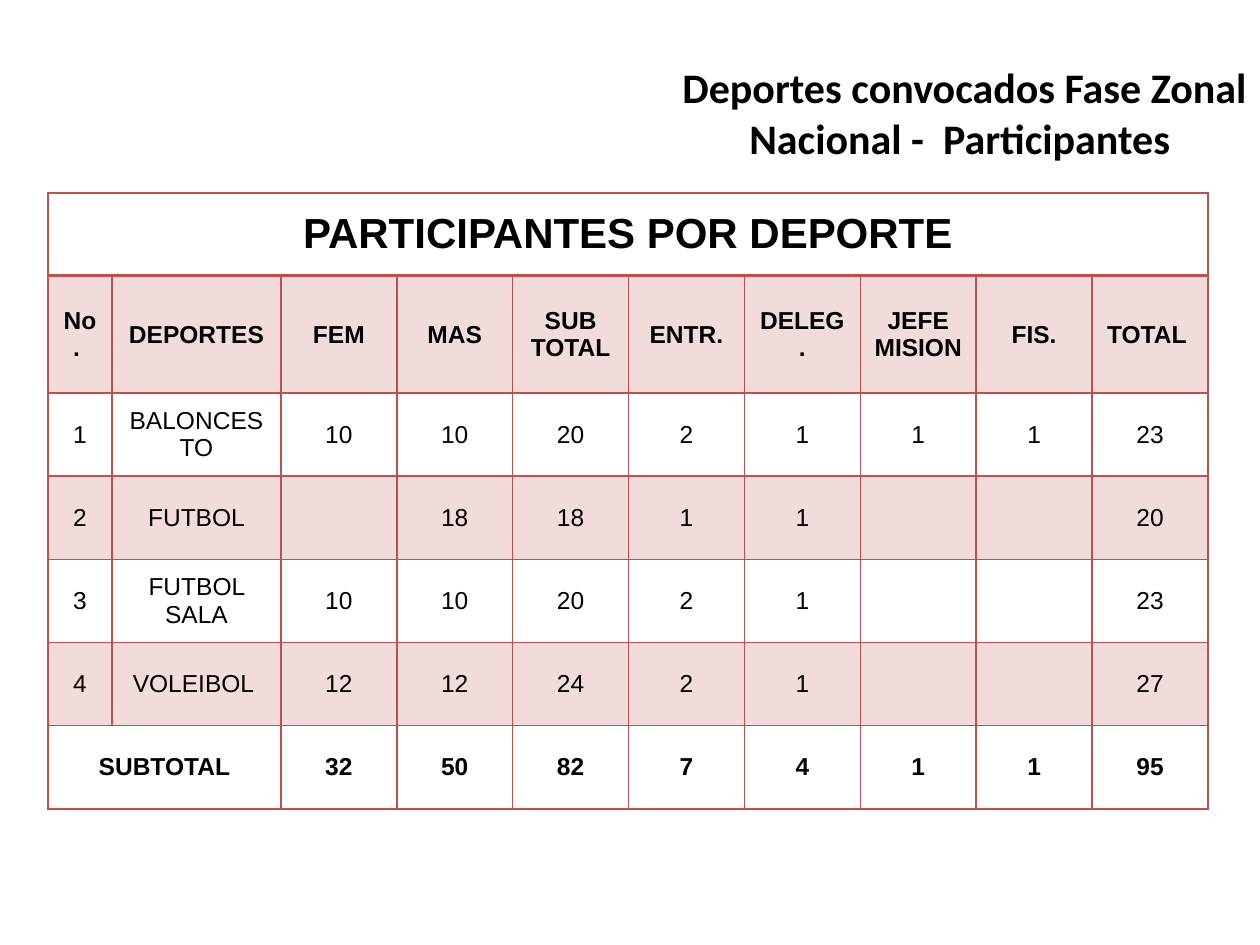
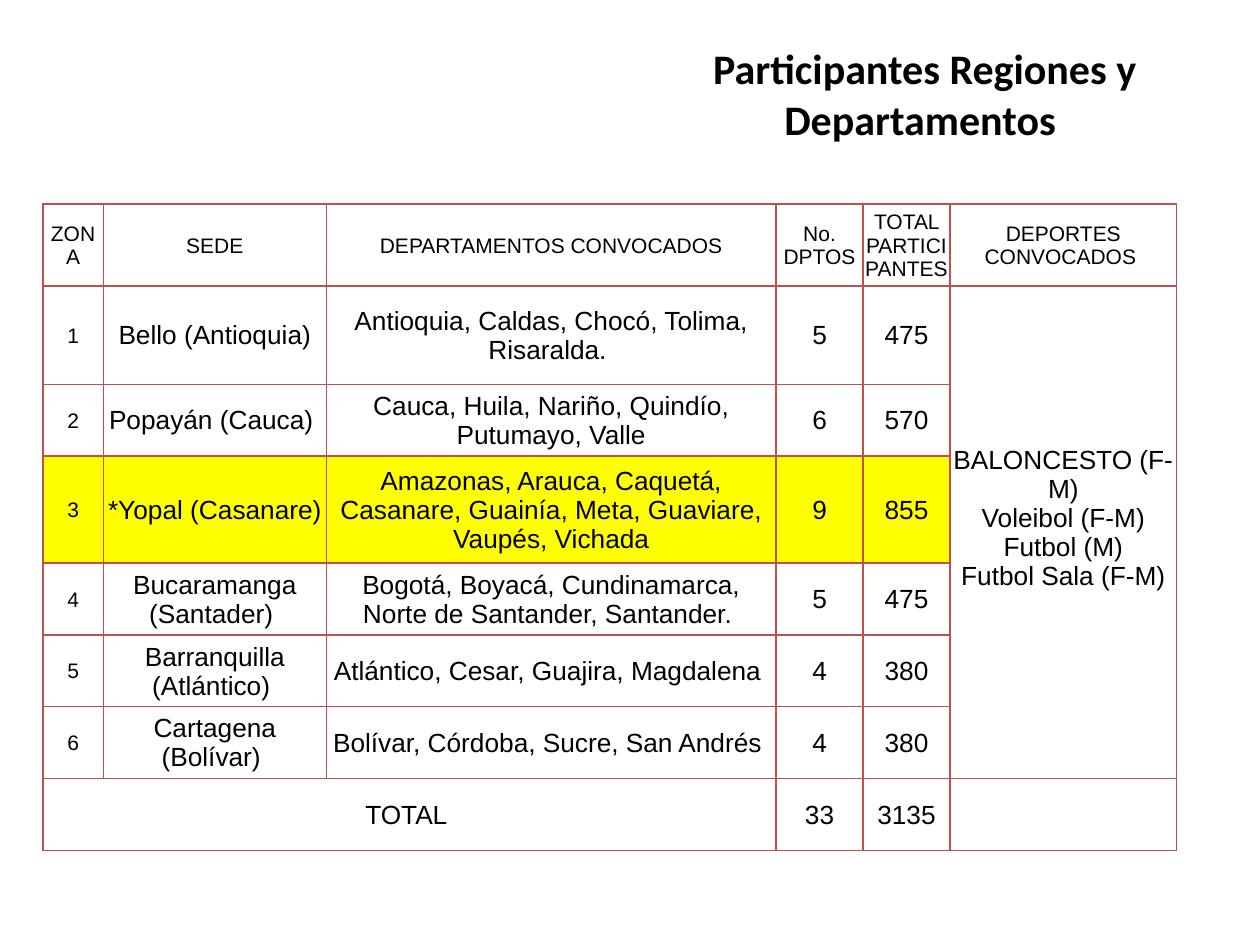
from lxml import etree
from pptx import Presentation
from pptx.dml.color import RGBColor
from pptx.enum.text import MSO_ANCHOR, PP_ALIGN
from pptx.oxml.ns import qn
from pptx.util import Inches, Pt

CENTER = PP_ALIGN.CENTER
MIDDLE = MSO_ANCHOR.MIDDLE

BLACK, RED, YELLOW = "000000", "C0504D", "FFFF00"
TITLE_FONT, TABLE_FONT = "Calibri", "Arial"
BAND_ALPHA = 20
THIN, THICK = 1, 2

SPORTS_HEADER = ["No. ", "DEPORTES", "FEM", "MAS", "SUB TOTAL", "ENTR.", "DELEG.",
                 "JEFE MISION", "FIS.", "TOTAL "]
SPORTS = [
    ["1", "BALONCESTO", "10", "10", "20", "2", "1", "1", "1", "23"],
    ["2", "FUTBOL", "", "18", "18", "1", "1", "", "", "20"],
    ["3", "FUTBOL SALA", "10", "10", "20", "2", "1", "", "", "23"],
    ["4", "VOLEIBOL ", "12", "12", "24", "2", "1", "", "", "27"],
]
SPORTS_SUM = ["SUBTOTAL", "", "32", "50", "82", "7", "4", "1", "1", "95"]

ZONES_HEADER = ["ZONA", "SEDE", "DEPARTAMENTOS CONVOCADOS", "No. DPTOS",
                "TOTAL PARTICIPANTES ", "DEPORTES CONVOCADOS "]
ZONES = [
    ["1", "Bello (Antioquia)", "Antioquia, Caldas, Chocó, Tolima, Risaralda. ", "5", "475",
     "BALONCESTO (F-M)\nVoleibol (F-M)\nFutbol (M)\nFutbol Sala (F-M)"],
    ["2", "Popayán (Cauca) ", "Cauca, Huila, Nariño, Quindío, Putumayo, Valle", "6", "570", ""],
    ["3", "*Yopal (Casanare) ",
     "Amazonas, Arauca, Caquetá, Casanare, Guainía, Meta, Guaviare, Vaupés, Vichada",
     "9", "855", ""],
    ["4", "Bucaramanga (Santader) ",
     "Bogotá, Boyacá, Cundinamarca, Norte de Santander, Santander. ", "5", "475", ""],
    ["5", "Barranquilla (Atlántico) ", "Atlántico, Cesar, Guajira, Magdalena ", "4", "380", ""],
    ["6", "Cartagena (Bolívar) ", "Bolívar, Córdoba, Sucre, San Andrés ", "4", "380", ""],
]
ZONES_SUM = ["TOTAL ", "", "", "33", "3135", ""]


def color(value):
    return RGBColor.from_string(value)


def write(frame, text, size=14, font=TABLE_FONT, bold=False):
    """Write centred text; each newline becomes a line break."""
    para = frame.paragraphs[0]
    para.alignment = CENTER
    for number, line in enumerate(text.split("\n")):
        if number:
            para.add_line_break()
        span = para.add_run()
        span.text = line
        span.font.size, span.font.name, span.font.bold = Pt(size), font, bold
        span.font.color.rgb = color(BLACK)


def add_title(page, text, box):
    frame = page.shapes.add_textbox(*map(Inches, box)).text_frame
    frame.word_wrap = True
    write(frame, text, size=24, font=TITLE_FONT, bold=True)


def fill_cell(cell, value, alpha=None):
    cell.fill.solid()
    cell.fill.fore_color.rgb = color(value)
    if alpha:
        tint = cell._tc.tcPr.find(".//" + qn("a:srgbClr"))
        etree.SubElement(tint, qn("a:alpha"), val=str(alpha * 1000))


def set_borders(cell, top=THIN, bottom=THIN):
    widths = {"a:lnL": THIN, "a:lnR": THIN, "a:lnT": top, "a:lnB": bottom}
    for place, (side, width) in enumerate(widths.items()):
        line = etree.Element(qn(side), w=str(Pt(width)))
        paint = etree.SubElement(line, qn("a:solidFill"))
        etree.SubElement(paint, qn("a:srgbClr"), val=RED)
        cell._tc.tcPr.insert(place, line)


def add_grid(page, left, top, widths, heights):
    """Add a plain table with the given column widths and row heights."""
    box = map(Inches, (left, top, sum(widths), sum(heights)))
    table = page.shapes.add_table(len(heights), len(widths), *box).table
    table.first_row = table.horz_banding = False
    for column, width in zip(table.columns, widths):
        column.width = Inches(width)
    for row, height in zip(table.rows, heights):
        row.height = Inches(height)
    for cell in table.iter_cells():
        cell.vertical_anchor = MIDDLE
        cell.fill.background()
    return table


def build_sports(page, left, top):
    add_title(page, "Deportes convocados Fase Zonal Nacional -  Participantes ",
              (5.31, 0.44, 4.69, 0.63))
    table = add_grid(page, left, top, [0.51, 1.34] + [0.92] * 8, [0.66, 0.93] + [0.66] * 5)
    last = len(table.rows) - 1

    # Heading row across the table
    table.cell(0, 0).merge(table.cell(0, 9))
    write(table.cell(0, 0).text_frame, "PARTICIPANTES POR DEPORTE", size=24, bold=True)

    # Header, sports and subtotal
    table.cell(last, 0).merge(table.cell(last, 1))
    for r, values in enumerate([SPORTS_HEADER, *SPORTS, SPORTS_SUM], start=1):
        for c, text in enumerate(values):
            cell = table.cell(r, c)
            if text:
                write(cell.text_frame, text, bold=r in (1, last))
            if r % 2 and r < last:
                fill_cell(cell, RED, BAND_ALPHA)
    for r in range(last + 1):
        for c in range(len(table.columns)):
            set_borders(table.cell(r, c), top=THICK if r == 1 else THIN,
                        bottom=THICK if r == 0 else THIN)


def build_zones(page, left, top):
    add_title(page, "Participantes Regiones y Departamentos ", (4.84, 0.29, 5, 0.91))
    table = add_grid(page, left, top, [0.48, 1.77, 3.57, 0.69, 0.69, 1.8],
                     [0.65, 0.78, 0.57, 0.85] + [0.57] * 4)
    last = len(table.rows) - 1
    sports_column = len(table.columns) - 1
    host_row = 3

    # Shared sports cell and total label
    table.cell(1, sports_column).merge(table.cell(last - 1, sports_column))
    table.cell(last, 0).merge(table.cell(last, 2))

    # Header, zones and total
    for r, values in enumerate([ZONES_HEADER, *ZONES, ZONES_SUM]):
        for c, text in enumerate(values):
            cell = table.cell(r, c)
            cell.margin_left = cell.margin_right = cell.margin_top = Inches(0.01)
            cell.margin_bottom = 0
            if text:
                small = r == 0 or (c == 0 and r < last)
                write(cell.text_frame, text, size=12 if small else 15)
            if r == host_row and c < sports_column:
                fill_cell(cell, YELLOW)
            set_borders(cell)
    # The sports list sits half a line above the middle
    table.cell(1, sports_column).margin_bottom = Inches(0.23)


def main():
    deck = Presentation()
    deck.slide_width, deck.slide_height = Inches(10), Inches(7.5)
    blank = deck.slide_layouts[6]
    build_sports(deck.slides.add_slide(blank), 0.38, 1.53)
    build_zones(deck.slides.add_slide(blank), 0.34, 1.62)
    deck.save("out.pptx")


if __name__ == "__main__":
    main()
